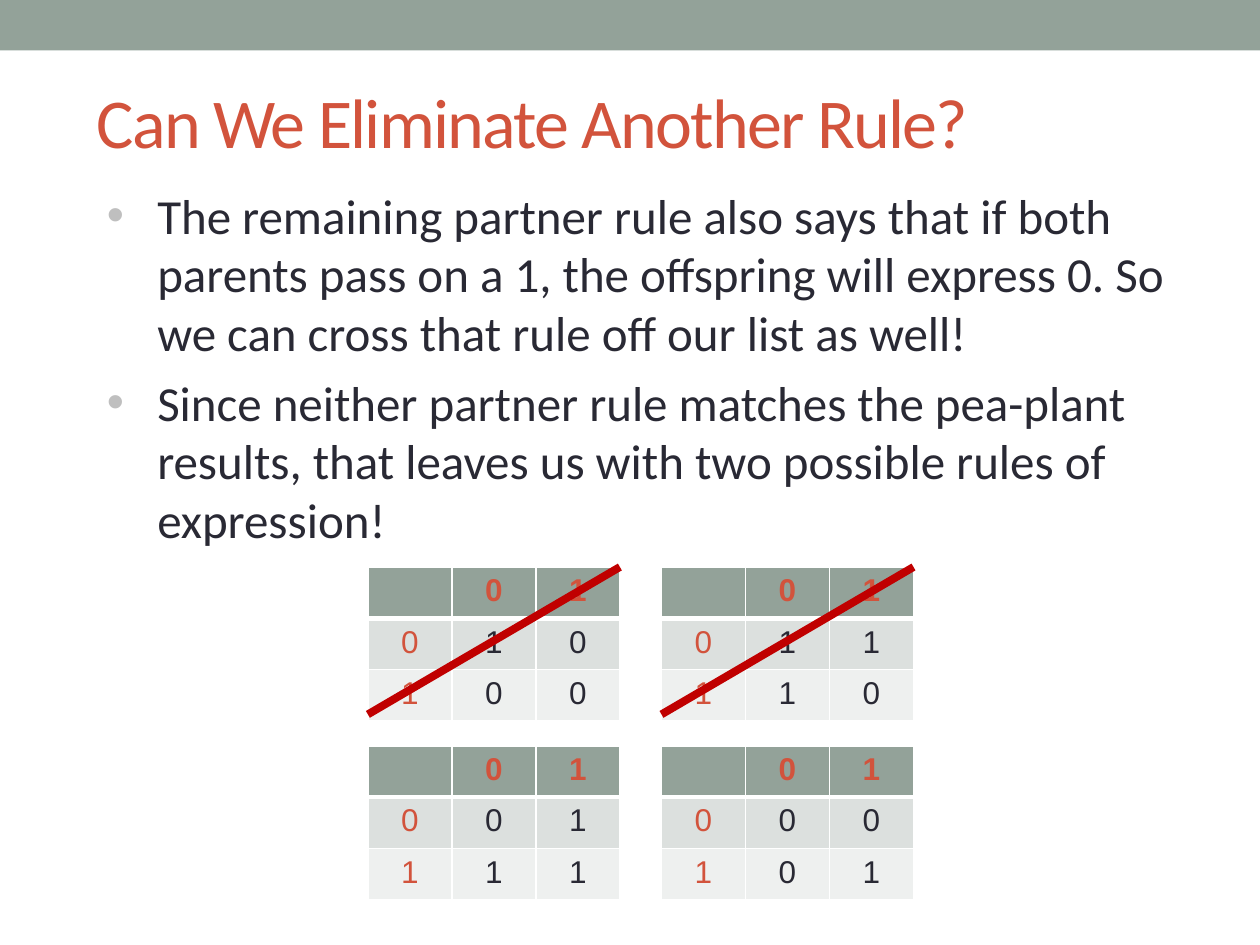
from dataclasses import dataclass

from lxml.etree import SubElement
from pptx import Presentation
from pptx.dml.color import RGBColor
from pptx.enum.shapes import MSO_CONNECTOR, MSO_SHAPE
from pptx.enum.text import MSO_ANCHOR, PP_ALIGN
from pptx.oxml.ns import qn
from pptx.slide import Slide
from pptx.table import _Cell
from pptx.text.text import TextFrame, _Paragraph
from pptx.util import Inches, Pt


@dataclass(frozen=True)
class Theme:
    """Colours, fonts and type sizes of the slide."""

    band: str = "93A299"
    accent: str = "D2533C"
    ink: str = "292934"
    bullet: str = "BFBFBF"
    strike: str = "C00000"
    border: str = "FFFFFF"
    row_fills: tuple[str, ...] = ("93A299", "DCE0DE", "EEF0EF")
    text_font: str = "Calibri"
    table_font: str = "Arial"
    title_size: float = 40
    body_size: float = 28
    table_size: float = 18


@dataclass(frozen=True)
class Rule:
    """An expression rule: its grid place, outcomes and whether it is ruled out."""

    column: int
    row: int
    outcomes: tuple[str, str]
    eliminated: bool = False


THEME = Theme()
SLIDE_WIDTH, SLIDE_HEIGHT = Inches(10), Inches(7.5)
GRID_LEFT, GRID_TOP = 2.92, 4.5
COLUMN_STEP, ROW_STEP = 2.33, 1.42
RULE_WIDTH, RULE_HEIGHT, STRIKE_HEIGHT = 2, 1.22, 1.17
ALLELES = "01"
TITLE = "Can We Eliminate Another Rule?"
POINTS = (
    "The remaining partner rule also says that if both parents pass on a 1, "
    "the offspring will express 0. So we can cross that rule off our list as well!",
    "Since neither partner rule matches the pea-plant results, "
    "that leaves us with two possible rules of expression!",
)
RULES = (
    Rule(1, 0, ("11", "10"), eliminated=True),
    Rule(0, 0, ("10", "00"), eliminated=True),
    Rule(1, 1, ("00", "01")),
    Rule(0, 1, ("01", "11")),
)


def write(paragraph: _Paragraph, text: str, *, size: float, color: str,
          font: str = THEME.text_font, bold: bool = False,
          align: PP_ALIGN = PP_ALIGN.LEFT, spacing: float = 0) -> None:
    """Put one formatted run of text into a paragraph."""
    paragraph.alignment = align
    run = paragraph.add_run()
    run.text = text
    run.font.name = font
    run.font.size = Pt(size)
    run.font.bold = bold
    run.font.color.rgb = RGBColor.from_string(color)
    if spacing:
        run.font._element.set("spc", str(int(spacing * 100)))


def add_text_area(slide: Slide, left: float, top: float,
                  width: float, height: float) -> TextFrame:
    """Add a wrapping text box and return its text frame."""
    area = slide.shapes.add_textbox(*map(Inches, (left, top, width, height)))
    area.text_frame.word_wrap = True
    return area.text_frame


def add_bullet(paragraph: _Paragraph) -> None:
    """Give a paragraph a hanging grey bullet."""
    properties = paragraph._p.get_or_add_pPr()
    properties.set("marL", str(Inches(0.4)))
    properties.set("indent", str(Inches(-0.4)))
    color = SubElement(properties, qn("a:buClr"))
    SubElement(color, qn("a:srgbClr"), val=THEME.bullet)
    SubElement(properties, qn("a:buFont"), typeface="Arial")
    SubElement(properties, qn("a:buChar"), char="•")


def set_borders(cell: _Cell, bottom: float, top: float) -> None:
    """Draw the white borders of a cell, with widths in points."""
    properties = cell._tc.get_or_add_tcPr()
    widths = {"a:lnL": 1, "a:lnR": 1, "a:lnT": top, "a:lnB": bottom}
    for position, (tag, width) in enumerate(widths.items()):
        border = SubElement(properties, qn(tag), w=str(Pt(width)))
        fill = SubElement(border, qn("a:solidFill"))
        SubElement(fill, qn("a:srgbClr"), val=THEME.border)
        properties.insert(position, border)


def add_rule_table(slide: Slide, rule: Rule) -> None:
    """Add the table of one rule at its place in the grid."""
    left = GRID_LEFT + rule.column * COLUMN_STEP
    top = GRID_TOP + rule.row * ROW_STEP
    table = slide.shapes.add_table(
        3, 3, *map(Inches, (left, top, RULE_WIDTH, RULE_HEIGHT))).table
    rows = (" " + ALLELES, *(a + out for a, out in zip(ALLELES, rule.outcomes)))
    for r, values in enumerate(rows):
        for c, value in enumerate(values):
            cell = table.cell(r, c)
            cell.fill.solid()
            cell.fill.fore_color.rgb = RGBColor.from_string(THEME.row_fills[r])
            set_borders(cell, bottom=3 if r == 0 else 1, top=3 if r == 1 else 1)
            if value.strip():
                is_label = r == 0 or c == 0
                write(cell.text_frame.paragraphs[0], value,
                      size=THEME.table_size, font=THEME.table_font,
                      color=THEME.accent if is_label else THEME.ink,
                      bold=r == 0, align=PP_ALIGN.CENTER)


def add_strike(slide: Slide, rule: Rule) -> None:
    """Cross out a rule with a rising diagonal line."""
    left = GRID_LEFT + rule.column * COLUMN_STEP
    top = GRID_TOP + rule.row * ROW_STEP
    strike = slide.shapes.add_connector(
        MSO_CONNECTOR.STRAIGHT,
        *map(Inches, (left, top + STRIKE_HEIGHT, left + RULE_WIDTH, top)))
    strike.line.color.rgb = RGBColor.from_string(THEME.strike)
    strike.line.width = Pt(4.5)
    SubElement(strike._element.spPr, qn("a:effectLst"))


def add_header(slide: Slide) -> None:
    """Add the top band and the title."""
    band = slide.shapes.add_shape(
        MSO_SHAPE.RECTANGLE, 0, 0, SLIDE_WIDTH, Inches(0.4))
    band.shadow.inherit = False
    band.fill.solid()
    band.fill.fore_color.rgb = RGBColor.from_string(THEME.band)
    band.line.fill.background()
    title = add_text_area(slide, 0.67, 0.42, 8.83, 1.08)
    title.vertical_anchor = MSO_ANCHOR.MIDDLE
    write(title.paragraphs[0], TITLE, size=THEME.title_size,
          color=THEME.accent, spacing=-1)


def add_points(slide: Slide) -> None:
    """Add the bulleted argument."""
    body = add_text_area(slide, 0.75, 1.42, 8.83, 3.01)
    for index, point in enumerate(POINTS):
        paragraph = body.add_paragraph() if index else body.paragraphs[0]
        add_bullet(paragraph)
        if index:
            paragraph.space_before = Pt(6)
        write(paragraph, point, size=THEME.body_size, color=THEME.ink)


def main() -> None:
    """Build and save the slide."""
    presentation = Presentation()
    presentation.slide_width, presentation.slide_height = SLIDE_WIDTH, SLIDE_HEIGHT
    slide = presentation.slides.add_slide(presentation.slide_layouts[6])
    add_header(slide)
    for rule in RULES:
        add_rule_table(slide, rule)
    add_points(slide)
    for rule in reversed(RULES):
        if rule.eliminated:
            add_strike(slide, rule)
    presentation.save("out.pptx")


if __name__ == "__main__":
    main()
